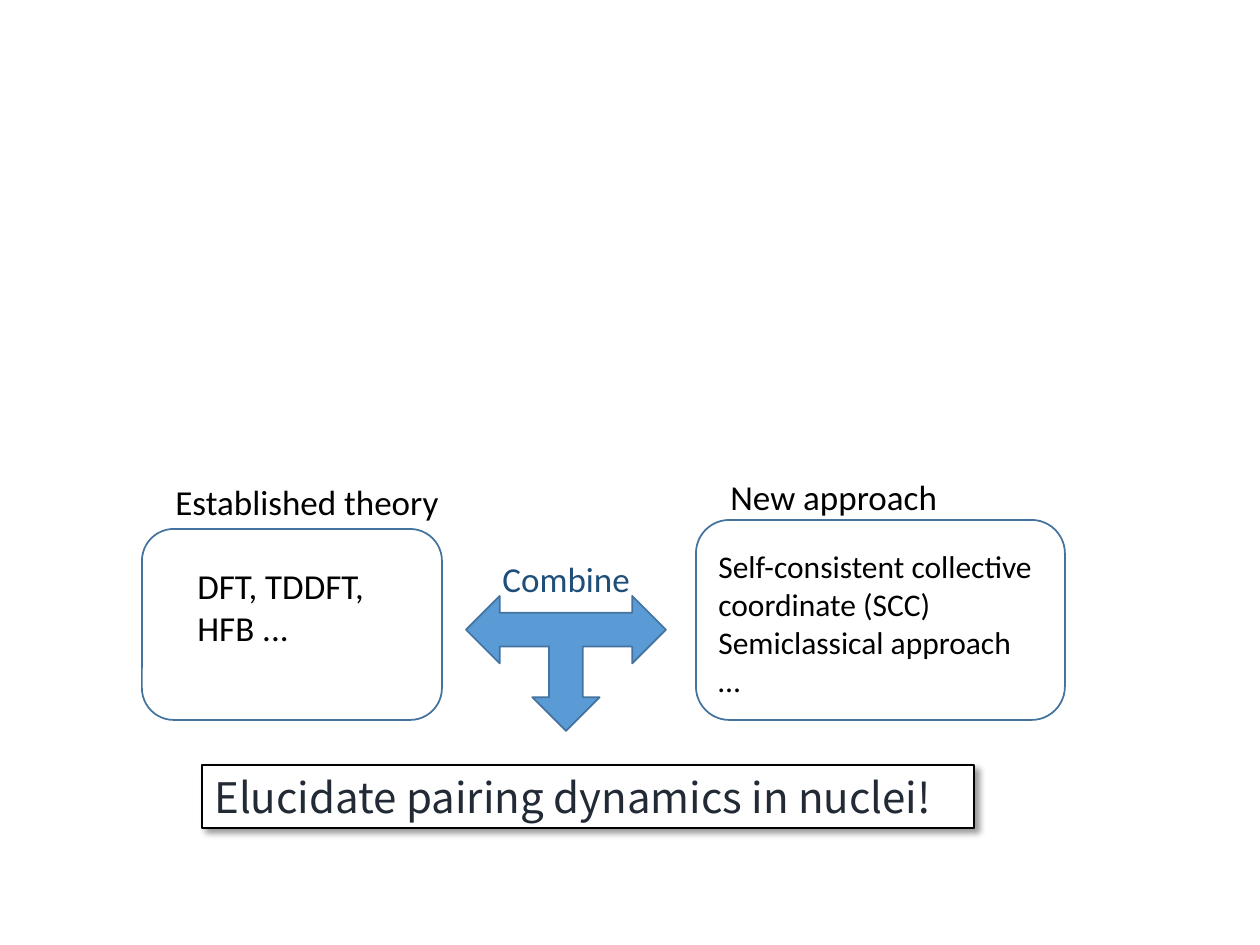
"""Build the slide on combining theories of pairing dynamics."""
from lxml import etree
from pptx import Presentation, util as u
from pptx.dml.color import RGBColor
from pptx.enum import shapes, text
from pptx.oxml import ns

PX = 914400 // 126
COLORS = {"white": "FFFFFF", "black": "000000", "blue": "5B9BD5",
          "outline": "43739E", "combine": "1F4E79", "goal": "222A35"}
THEORY_FRAMES = [(142, 529, 300, 191), (696, 520, 369, 200)]
LABELS = [
    ((706, 541, 343, 165), 18, "black",
     ["Self-consistent collective coordinate (SCC)", "Semiclassical approach", "…"]),
    ((185, 558, 214, 97), 20, "black", ["DFT, TDDFT,", "HFB ..."]),
    ((163, 474, 291, 55), 20, "black", ["Established theory"]),
    ((718, 469, 332, 55), 20, "black", ["New approach"]),
    ((490, 551, 178, 55), 20, "combine", ["Combine"]),
]
GOAL = ((202, 765, 772, 63), 24, "goal", ["Elucidate pairing dynamics in nuclei!"])
ARROW = (466, 596, 200, 135)


def rgb(name):
    return RGBColor.from_string(COLORS[name])


def emu(box):
    return [length * PX for length in box]


def add_box(slide, preset, box, fill=None, line="outline", width=1):
    shape = slide.shapes.add_shape(preset, *emu(box))
    shape.shadow.inherit = False
    if fill:
        shape.fill.solid()
        shape.fill.fore_color.rgb = rgb(fill)
    else:
        shape.fill.background()
    shape.line.color.rgb = rgb(line)
    shape.line.width = u.Pt(width)
    return shape


def write(shape, size, color, lines, font="Calibri"):
    frame = shape.text_frame
    frame.word_wrap = True
    frame.text = "\n".join(lines)
    for paragraph in frame.paragraphs:
        paragraph.alignment = text.PP_ALIGN.LEFT
        for run in paragraph.runs:
            run.font.size = u.Pt(size)
            run.font.name = font
            run.font.color.rgb = rgb(color)
            east_asian = etree.SubElement(run.font._element, ns.qn("a:ea"))
            east_asian.set("typeface", font)


def add_shadow(shape):
    effects = shape._element.spPr.find(ns.qn("a:effectLst"))
    shadow = etree.SubElement(
        effects, ns.qn("a:outerShdw"), blurRad=str(u.Pt(4)), dist=str(u.Pt(3)),
        dir="2700000", algn="tl", rotWithShape="0")
    color = etree.SubElement(shadow, ns.qn("a:srgbClr"), val=COLORS["black"])
    etree.SubElement(color, ns.qn("a:alpha"), val="40000")


def main():
    presentation = Presentation()
    presentation.slide_width, presentation.slide_height = u.Inches(10), u.Inches(7.5)
    slide = presentation.slides.add_slide(presentation.slide_layouts[6])
    preset = shapes.MSO_SHAPE

    for box in THEORY_FRAMES:
        add_box(slide, preset.FLOWCHART_ALTERNATE_PROCESS, box)
    for box, *content in LABELS:
        label = slide.shapes.add_textbox(*emu(box))
        write(label, *content)
        label.text_frame.auto_size = text.MSO_AUTO_SIZE.SHAPE_TO_FIT_TEXT

    box, *content = GOAL
    goal = add_box(slide, preset.RECTANGLE, box, "white", "black", 1.5)
    add_shadow(goal)
    write(goal, *content, font="Noto Sans CJK JP")
    goal.text_frame.vertical_anchor = text.MSO_ANCHOR.MIDDLE

    arrow = add_box(slide, preset.LEFT_RIGHT_UP_ARROW, ARROW, "blue")
    arrow._element.spPr.xfrm.set("flipV", "1")
    presentation.save("out.pptx")


if __name__ == "__main__":
    main()
